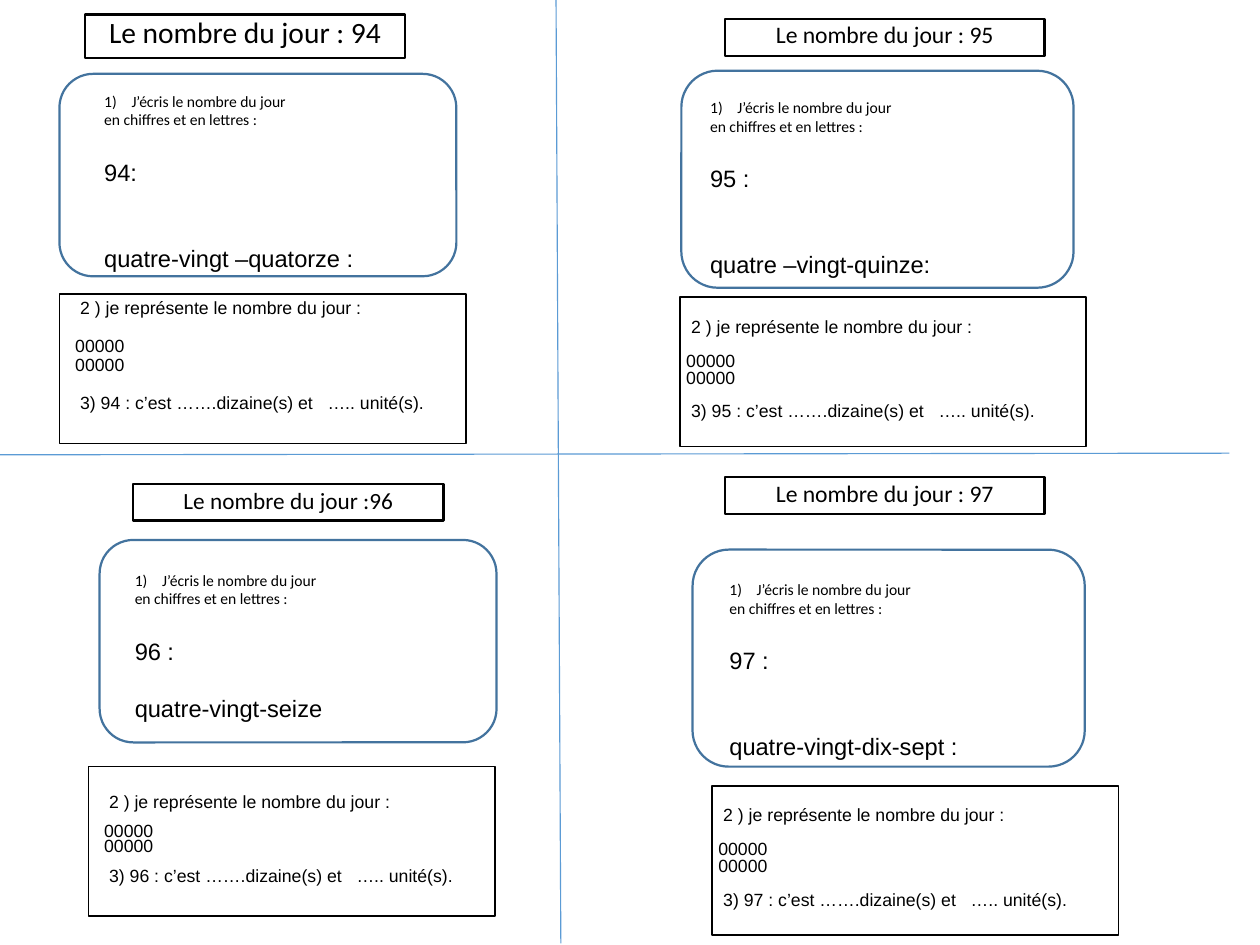
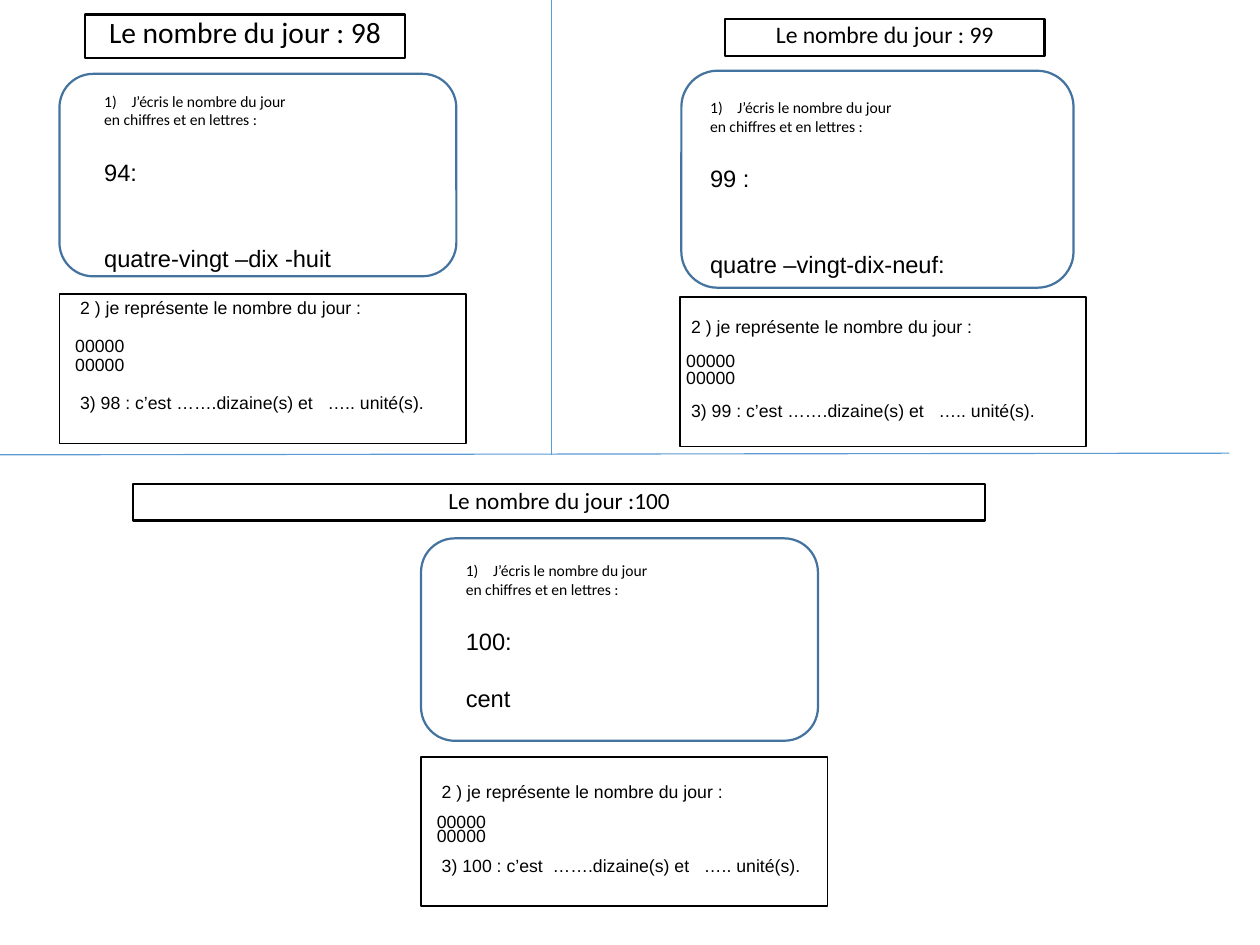
from collections import namedtuple

from lxml import etree
from pptx import Presentation
from pptx.dml.color import RGBColor
from pptx.enum.shapes import MSO_CONNECTOR as Connector, MSO_SHAPE as Shape
from pptx.enum.text import MSO_ANCHOR as Anchor, PP_ALIGN as Align
from pptx.oxml.ns import qn
from pptx.util import Emu, Pt

PX = 9144  # 100 px to the inch
SLIDE_SIZE = (784, 588)
COLORS = {"text": "000000", "paper": "FFFFFF", "frame": "43739E", "divider": "5B9BD5"}
PROMPT_SIZE = (181, 105)
WORK_SIZE = (253, 93)
BLANK_LINE = 12.9  # points

# Title size in points, insets in px, line pitch in points
Style = namedtuple("Style", "title_size title_lift work_left work_top pitch")
LARGE = Style(13.2, 6, 10, 3, 8.5)
RIGHT = Style(10.6, 4, 4, 14, 7.6)
LOW = Style(10.4, 2, 10, 19, 6.6)

# Title and frame: left, top, width, height; prompt and work: left, top
Place = namedtuple("Place", "style title frame prompt work")
TOP_LEFT = Place(LARGE, (53, 9, 199, 27), (37, 46, 247, 126), (55, 52), (37, 183))
TOP_RIGHT = Place(RIGHT, (451, 12, 199, 23), (424, 44, 244, 135), (432, 56), (423, 185))
LOW_LEFT = Place(LOW, (83, 301, 193, 23), (62, 336, 247, 126), (74, 350), (55, 477))
LOW_RIGHT = Place(RIGHT, (451, 297, 199, 23), (431, 342, 244, 135), (444, 356), (443, 489))
LOW_MIDDLE = Place(LOW, (83, 301, 530, 23), (262, 335, 247, 126), (280, 344), (262, 471))

# Place, title, figures, words, blank lines above the words, start of question 3
Card = namedtuple("Card", "place title figures words blanks question")
SLIDES = [
    {
        "dividers": [(346, 0, 349, 587), (0, 283, 765, 282)],
        "cards": [
            Card(TOP_LEFT, "Le nombre du jour : 94", "94:", "quatre-vingt –quatorze :", 2, "94 : c’est "),
            Card(TOP_RIGHT, "Le nombre du jour : 95", "95 :", "quatre –vingt-quinze:", 2, "95 : c’est "),
            Card(LOW_LEFT, "Le nombre du jour :96", "96 :", "quatre-vingt-seize", 1, "96 : c’est "),
            Card(LOW_RIGHT, "Le nombre du jour : 97", "97 :", "quatre-vingt-dix-sept :", 2, "97 : c’est "),
        ],
    },
    {
        "dividers": [(343, 0, 343, 283), (0, 283, 765, 282)],
        "cards": [
            Card(TOP_LEFT, "Le nombre du jour : 98", "94:", "quatre-vingt –dix -huit", 2, "98 : c’est "),
            Card(TOP_RIGHT, "Le nombre du jour : 99", "99 :", "quatre –vingt-dix-neuf:", 2, "99 : c’est "),
            Card(LOW_MIDDLE, "Le nombre du jour :100", "100:", "cent", 1, "100 : c’est  "),
        ],
    },
]


def to_emu(lengths):
    return [Emu(length * PX) for length in lengths]


def color(name):
    return RGBColor.from_string(COLORS[name])


def add_divider(slide, ends):
    line = slide.shapes.add_connector(Connector.STRAIGHT, *to_emu(ends))
    line.line.color.rgb = color("divider")
    line.line.width = Pt(0.5)
    etree.SubElement(line._element.spPr, qn("a:effectLst"))


def add_box(slide, preset, box, line_color, line_width, fill=None):
    shape = slide.shapes.add_shape(preset, *to_emu(box))
    shape.shadow.inherit = False
    if fill:
        shape.fill.solid()
        shape.fill.fore_color.rgb = color(fill)
    else:
        shape.fill.background()
    shape.line.color.rgb = color(line_color)
    shape.line.width = Pt(line_width)
    return shape


def write(shape, lines, insets, anchor=Anchor.TOP, align=Align.LEFT, pitch=None):
    """Fill a shape with (text, font, size, space before) lines; insets: left, top, right, bottom."""
    frame = shape.text_frame
    frame.word_wrap = True
    frame.vertical_anchor = anchor
    frame.margin_left, frame.margin_top, frame.margin_right, frame.margin_bottom = to_emu(insets)
    frame.text = "\n".join(line[0] for line in lines)
    for paragraph, (_, font_name, size, space) in zip(frame.paragraphs, lines):
        paragraph.alignment = align
        paragraph.space_before = Pt(space)
        if pitch:
            paragraph.line_spacing = Pt(pitch)
        for run in paragraph.runs:
            run.font.name = font_name
            run.font.size = Pt(size)
            run.font.color.rgb = color("text")


def number_paragraph(paragraph):
    properties = paragraph._p.get_or_add_pPr()
    properties.set("marL", str(17 * PX))
    properties.set("indent", str(-17 * PX))
    etree.SubElement(properties, qn("a:buFont"), typeface="+mj-lt")
    etree.SubElement(properties, qn("a:buAutoNum"), type="arabicParenR")


def add_title(slide, card):
    style = card.place.style
    title = add_box(slide, Shape.RECTANGLE, card.place.title, "text", 1, "paper")
    write(title, [(card.title, "Calibri", style.title_size, 0)],
          (4, 0, 4, style.title_lift), Anchor.MIDDLE, Align.CENTER)


def add_prompt(slide, card):
    add_box(slide, Shape.ROUNDED_RECTANGLE, card.place.frame, "frame", 1)
    prompt = slide.shapes.add_textbox(*to_emu(card.place.prompt + PROMPT_SIZE))
    write(prompt, [
        ("J’écris le nombre du jour", "Calibri", 7, 0),
        ("en chiffres et en lettres :", "Calibri", 7, 0),
        (card.figures, "Arial", 10.6, BLANK_LINE),
        (card.words, "Arial", 10.6, BLANK_LINE * card.blanks),
    ], (10, 5, 10, 5))
    number_paragraph(prompt.text_frame.paragraphs[0])


def add_work(slide, card):
    style = card.place.style
    work = add_box(slide, Shape.RECTANGLE, card.place.work + WORK_SIZE, "text", 0.75)
    texts = [
        (" 2 ) je représente le nombre du jour :", 0),
        ("00000", style.pitch),
        ("00000", 0),
        (f" 3) {card.question}…….dizaine(s) et   ….. unité(s).", style.pitch),
    ]
    write(work, [(text, "Arial", 7.9, space) for text, space in texts],
          (style.work_left, style.work_top, 4, 0), pitch=style.pitch)


def main():
    presentation = Presentation()
    presentation.slide_width, presentation.slide_height = to_emu(SLIDE_SIZE)
    for content in SLIDES:
        slide = presentation.slides.add_slide(presentation.slide_layouts[6])
        for ends in content["dividers"]:
            add_divider(slide, ends)
        for card in content["cards"]:
            add_title(slide, card)
            add_prompt(slide, card)
            add_work(slide, card)
    presentation.save("out.pptx")


if __name__ == "__main__":
    main()
